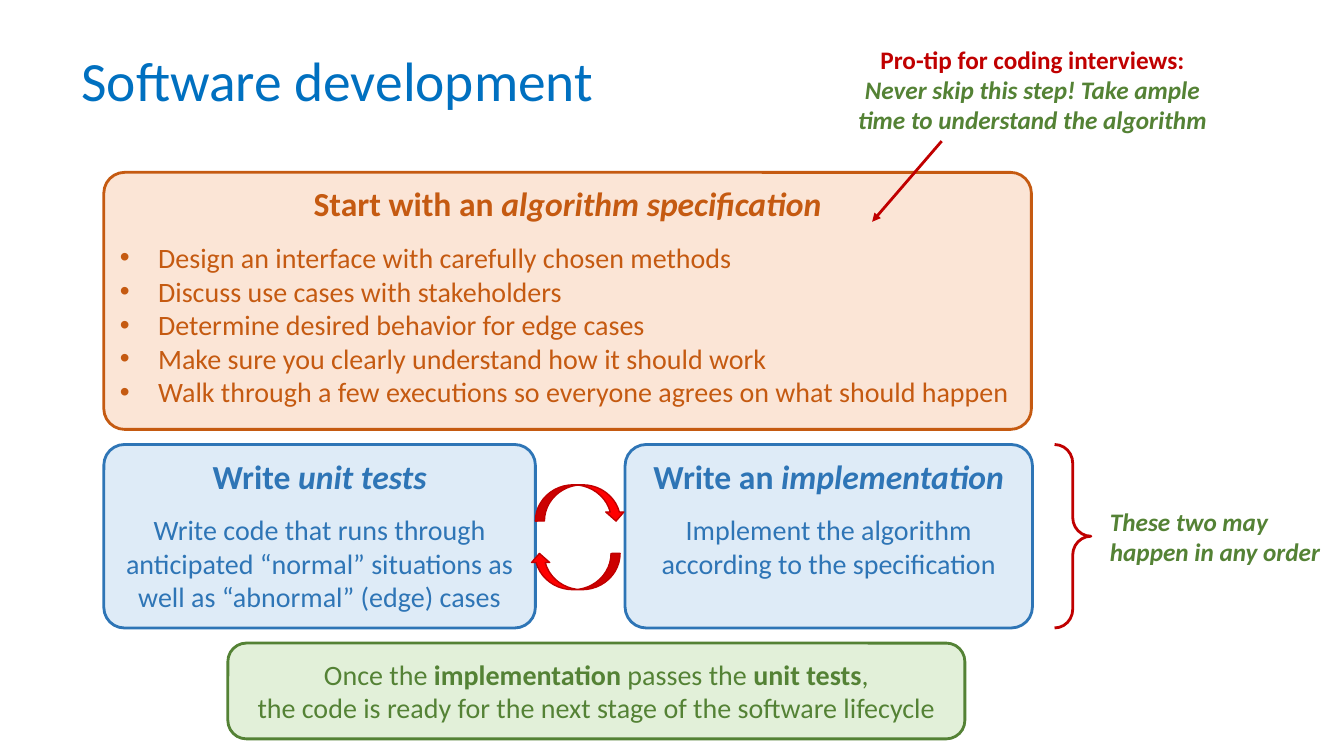
"""Build the software development slide."""
from lxml import etree
from pptx import Presentation
from pptx.dml.color import RGBColor
from pptx.enum.shapes import MSO_CONNECTOR, MSO_SHAPE
from pptx.enum.text import MSO_ANCHOR, PP_ALIGN
from pptx.oxml.ns import qn
from pptx.util import Inches, Pt

ROUNDED = MSO_SHAPE.ROUNDED_RECTANGLE
BRACE = MSO_SHAPE.RIGHT_BRACE
CURVED_ARROW = MSO_SHAPE.CURVED_DOWN_ARROW
STRAIGHT = MSO_CONNECTOR.STRAIGHT
TOP, MIDDLE = MSO_ANCHOR.TOP, MSO_ANCHOR.MIDDLE
LEFT, CENTER = PP_ALIGN.LEFT, PP_ALIGN.CENTER

BLUE, ORANGE, GREEN, RED = "2E75B6", "C55A11", "548235", "C00000"


def rgb(value):
    return RGBColor.from_string(value)


def add_runs(p, align, size, runs):
    p.alignment = align
    for text, color, bold, italic in runs:
        r = p.add_run()
        r.text = text
        r.font.name = "Calibri"
        r.font.size = Pt(size)
        r.font.bold = bold
        r.font.italic = italic
        r.font.color.rgb = rgb(color)


prs = Presentation()
prs.slide_width = Inches(13.33)
prs.slide_height = Inches(7.5)
s = prs.slides.add_slide(prs.slide_layouts[6])

title = s.shapes.add_textbox(Inches(0.71), Inches(0.25), Inches(6.36), Inches(1.15))
tf = title.text_frame
tf.word_wrap = True
tf.vertical_anchor = MIDDLE
add_runs(tf.paragraphs[0], LEFT, 39.6, [("Software development", "0070C0", False, False)])
tf.paragraphs[0].line_spacing = 0.9

steps = [
    (1.03, 1.71, 9.2, 2.55, 0.081, "FBE5D6", ORANGE, "Start with an ", "algorithm specification", [
        "Design an interface with carefully chosen methods",
        "Discuss use cases with stakeholders",
        "Determine desired behavior for edge cases",
        "Make sure you clearly understand how it should work",
        "Walk through a few executions so everyone agrees on what should happen",
    ]),
    (1.03, 4.41, 4.28, 1.82, 0.112, "DEEBF7", BLUE, "Write ", "unit tests", [
        "Write code that runs through anticipated “normal” situations as well as “abnormal” (edge) cases",
    ]),
    (6.2, 4.41, 4.04, 1.82, 0.115, "DEEBF7", BLUE, "Write an ", "implementation", [
        "Implement the algorithm according to the specification",
    ]),
]
for x, y, w, h, corner, fill, color, lead, term, body in steps:
    box = s.shapes.add_shape(ROUNDED, Inches(x), Inches(y), Inches(w), Inches(h))
    box.shadow.inherit = False
    box.adjustments[0] = corner
    box.fill.solid()
    box.fill.fore_color.rgb = rgb(fill)
    box.line.color.rgb = rgb(color)
    box.line.width = Pt(2)
    tf = box.text_frame
    tf.word_wrap = True
    tf.vertical_anchor = TOP
    heading = tf.paragraphs[0]
    add_runs(heading, CENTER, 24, [(lead, color, True, False), (term, color, True, True)])
    heading.space_after = Pt(12)
    bulleted = len(body) > 1
    for text in body:
        p = tf.add_paragraph()
        p.level = 1
        add_runs(p, LEFT if bulleted else CENTER, 20, [(text, color, False, False)])
        pPr = p._p.get_or_add_pPr()
        indent = Inches(0.38) if bulleted else 0
        pPr.set("marL", str(indent))
        pPr.set("indent", str(-indent))
        if bulleted:
            etree.SubElement(pPr, qn("a:buFont")).set("typeface", "Arial")
            etree.SubElement(pPr, qn("a:buChar")).set("char", "•")

arrow = s.shapes.add_connector(STRAIGHT, Inches(9.34), Inches(1.4), Inches(8.65), Inches(2.2))
arrow.line.color.rgb = rgb(RED)
arrow.line.width = Pt(2)
etree.SubElement(arrow.line._get_or_add_ln(), qn("a:tailEnd")).set("type", "triangle")
etree.SubElement(arrow._element.spPr, qn("a:effectLst"))

notes = [
    (8.35, 0.39, 3.78, 1.01, CENTER, [
        ("Pro-tip for coding interviews: ", RED, True, False),
        ("Never skip this step! Take ample time to understand the algorithm", GREEN, True, True),
    ]),
    (10.91, 4.97, 2.32, 0.71, LEFT, [("These two may happen in any order", GREEN, True, True)]),
]
for x, y, w, h, align, runs in notes:
    note = s.shapes.add_textbox(Inches(x), Inches(y), Inches(w), Inches(h))
    note.text_frame.word_wrap = True
    add_runs(note.text_frame.paragraphs[0], align, 18, runs)

brace = s.shapes.add_shape(BRACE, Inches(10.46), Inches(4.41), Inches(0.36), Inches(1.82))
brace.shadow.inherit = False
brace.adjustments[0] = 0.518
brace.adjustments[1] = 0.5
brace.fill.background()
brace.line.color.rgb = rgb(RED)
brace.line.width = Pt(2)

result = s.shapes.add_shape(ROUNDED, Inches(2.26), Inches(6.38), Inches(7.31), Inches(0.95))
result.shadow.inherit = False
result.adjustments[0] = 0.193
result.fill.solid()
result.fill.fore_color.rgb = rgb("E2F0D9")
result.line.color.rgb = rgb(GREEN)
result.line.width = Pt(2)
tf = result.text_frame
tf.word_wrap = True
tf.vertical_anchor = MIDDLE
add_runs(tf.paragraphs[0], CENTER, 20, [
    ("Once the ", GREEN, False, False),
    ("implementation", GREEN, True, False),
    (" passes the ", GREEN, False, False),
    ("unit tests", GREEN, True, False),
    (",", GREEN, False, False),
])
add_runs(tf.add_paragraph(), CENTER, 20, [
    ("the code is ready for the next stage of the software lifecycle", GREEN, False, False),
])

for x, y, rotation in [(5.31, 4.81, 0), (5.26, 5.49, 180)]:
    cycle = s.shapes.add_shape(CURVED_ARROW, Inches(x), Inches(y), Inches(0.89), Inches(0.36))
    cycle.shadow.inherit = False
    cycle.rotation = rotation
    cycle.fill.solid()
    cycle.fill.fore_color.rgb = rgb("FF0000")
    cycle.line.color.rgb = rgb(RED)
    cycle.line.width = Pt(1)

prs.save("out.pptx")
